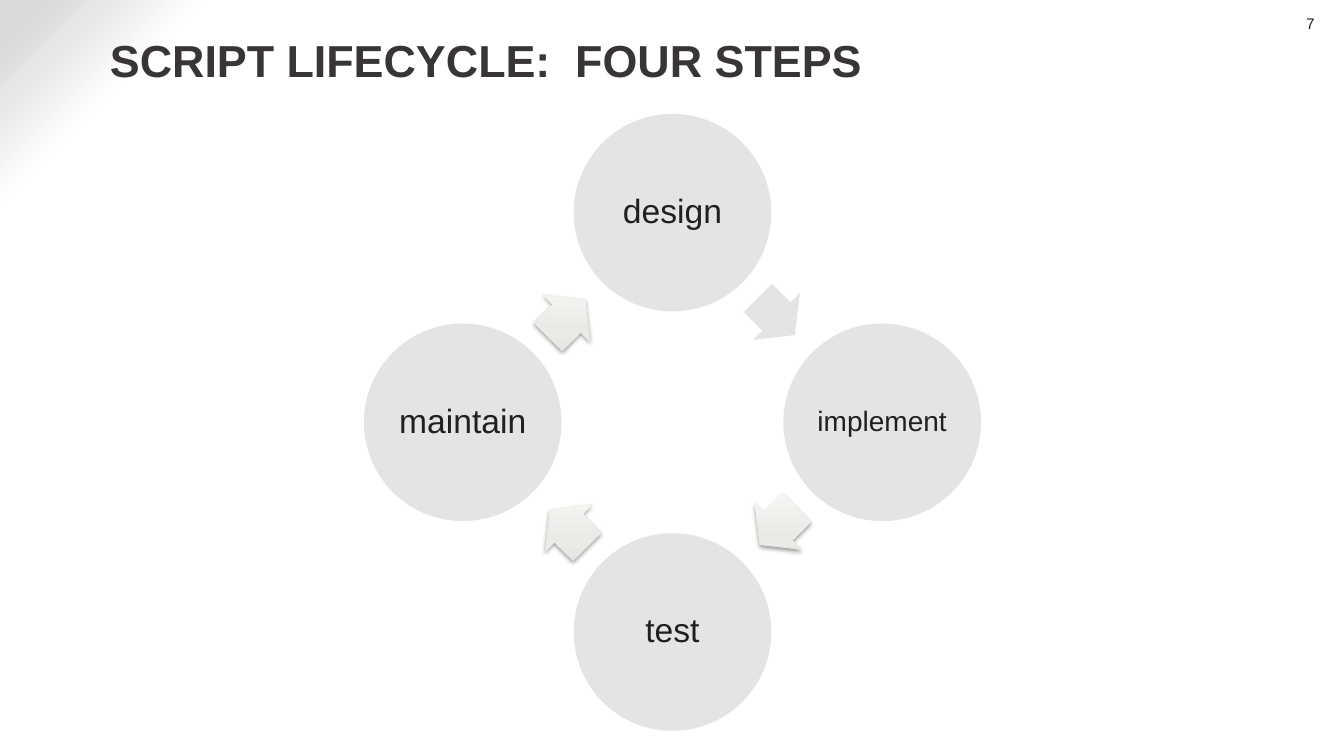
import math

import lxml.etree
import pptx
import pptx.dml.color
import pptx.enum.shapes
import pptx.enum.text
import pptx.oxml
import pptx.oxml.ns
import pptx.util

Inches = pptx.util.Inches
SHAPE = pptx.enum.shapes.MSO_SHAPE
ALIGN = pptx.enum.text.PP_ALIGN
ANCHOR = pptx.enum.text.MSO_ANCHOR

INK, TITLE_INK, GREY = "221F20", "393436", "E4E4E4"
STEPS = [("design", 24), ("implement", 20), ("test", 24), ("maintain", 24)]
CENTRE_X, CENTRE_Y, RADIUS = 6.67, 4.19, 2.08
CIRCLE_SIZE = 1.96
ARROW_WIDTH, ARROW_HEIGHT = 0.52, 0.66
ARROW_SETBACK = 0.01


def colour(value):
    return pptx.dml.color.RGBColor.from_string(value)


def write_text(frame, text, size=24, ink=INK, bold=False, align=ALIGN.CENTER,
               anchor=ANCHOR.MIDDLE, insets=(0, 0, 0, 0), line_spacing=None):
    frame.word_wrap = True
    frame.auto_size = pptx.enum.text.MSO_AUTO_SIZE.NONE
    frame.vertical_anchor = anchor
    (frame.margin_left, frame.margin_top,
     frame.margin_right, frame.margin_bottom) = map(Inches, insets)
    para = frame.paragraphs[0]
    para.alignment = align
    para.line_spacing = line_spacing
    span = para.add_run()
    span.text = text
    span.font.name = "Arial"
    span.font.size = pptx.util.Pt(size)
    span.font.bold = bold
    span.font.color.rgb = colour(ink)


def paint_gradient(fill, element, stops, direction):
    """Fill with (percent, colour) stops; direction is a lin or path element."""
    fill.gradient()
    gradient = element.xpath(".//a:gradFill")[0]
    gradient.set("rotWithShape", "0")
    for child in list(gradient):
        gradient.remove(child)
    stop_list = lxml.etree.SubElement(gradient, pptx.oxml.ns.qn("a:gsLst"))
    for percent, value in stops:
        stop = lxml.etree.SubElement(stop_list, pptx.oxml.ns.qn("a:gs"),
                                     pos=str(percent * 1000))
        lxml.etree.SubElement(stop, pptx.oxml.ns.qn("a:srgbClr"), val=value)
    gradient.append(pptx.oxml.parse_xml(direction))


def add_shadow(shape):
    shape.element.spPr.append(pptx.oxml.parse_xml(
        f'<a:effectLst {pptx.oxml.ns.nsdecls("a")}>'
        '<a:outerShdw blurRad="40000" dist="20000" dir="5400000" rotWithShape="0">'
        '<a:srgbClr val="000000"><a:alpha val="38000"/></a:srgbClr>'
        '</a:outerShdw></a:effectLst>'))


def add_centred(shapes, kind, x, y, width, height):
    shape = shapes.add_shape(kind, Inches(x - width / 2), Inches(y - height / 2),
                             Inches(width), Inches(height))
    shape.fill.solid()
    shape.fill.fore_color.rgb = colour(GREY)
    shape.line.fill.background()
    return shape


def add_step(shapes, x, y, label, size):
    circle = add_centred(shapes, SHAPE.OVAL, x, y, CIRCLE_SIZE, CIRCLE_SIZE)
    circle.shadow.inherit = False
    write_text(circle.text_frame, label, size=size, insets=(0.03,) * 4,
               line_spacing=0.9)


def add_arrow(shapes, x, y, rotation, raised):
    arrow = add_centred(shapes, SHAPE.RIGHT_ARROW, x, y, ARROW_WIDTH, ARROW_HEIGHT)
    arrow.rotation = rotation
    arrow.adjustments[0], arrow.adjustments[1] = 0.6, 0.5
    if raised:
        paint_gradient(arrow.fill, arrow.element,
                       [(0, "E2E2DE"), (35, "EAEAE7"), (100, "F7F7F5")],
                       f'<a:lin {pptx.oxml.ns.nsdecls("a")} ang="16200000" scaled="0"/>')
        add_shadow(arrow)
    else:
        arrow.shadow.inherit = False


def point_on_cycle(degrees, radius):
    angle = math.radians(degrees)
    return CENTRE_X + radius * math.cos(angle), CENTRE_Y + radius * math.sin(angle)


def add_cycle(page):
    shapes = page.shapes.add_group_shape().shapes
    for index, (label, size) in enumerate(STEPS):
        # Steps run clockwise from the top, each followed by its arrow
        bearing = 90 * index - 90
        add_step(shapes, *point_on_cycle(bearing, RADIUS), label, size)
        rotation = 45 + 90 * index
        x, y = point_on_cycle(bearing + 45, RADIUS / math.sqrt(2))
        x -= math.copysign(ARROW_SETBACK, math.cos(math.radians(rotation)))
        y -= math.copysign(ARROW_SETBACK, math.sin(math.radians(rotation)))
        add_arrow(shapes, x, y, rotation, raised=index > 0)


def add_title(page, text):
    title = page.shapes.title
    title.left, title.top = Inches(1.04), Inches(0.14)
    title.width, title.height = Inches(11.36), Inches(0.91)
    write_text(title.text_frame, text, size=32, ink=TITLE_INK, bold=True,
               align=ALIGN.LEFT, insets=(0.05, 0, 0, 0))


def add_page_number(page, number):
    box = page.shapes.add_textbox(Inches(12.44), Inches(0.14),
                                  Inches(0.6), Inches(0.19))
    write_text(box.text_frame, number, size=11, align=ALIGN.RIGHT,
               anchor=ANCHOR.TOP, insets=(0.1, 0, 0, 0))


def main():
    deck = pptx.Presentation()
    deck.slide_width, deck.slide_height = Inches(13.33), Inches(7.5)
    page = deck.slides.add_slide(deck.slide_layouts[5])

    # Background with a grey top left corner
    paint_gradient(page.background.fill, page.element,
                   [(87, "FFFFFF"), (90, "FFFFFF"), (98, "D9D9D9")],
                   f'<a:path {pptx.oxml.ns.nsdecls("a")} path="circle">'
                   '<a:fillToRect l="100000" t="100000"/></a:path>')

    # Heading, page number and diagram
    add_title(page, "SCRIPT LIFECYCLE:  FOUR STEPS")
    add_page_number(page, "7")
    add_cycle(page)
    deck.save("out.pptx")


if __name__ == "__main__":
    main()
